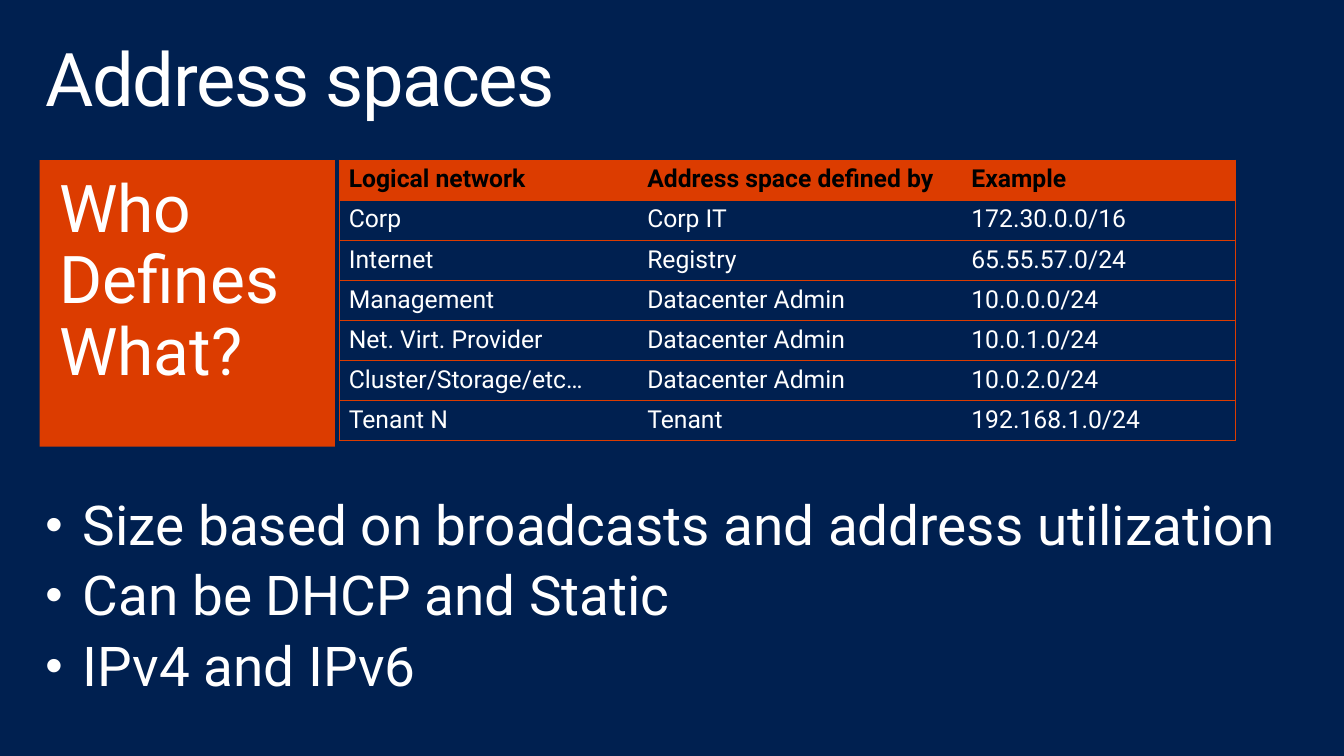
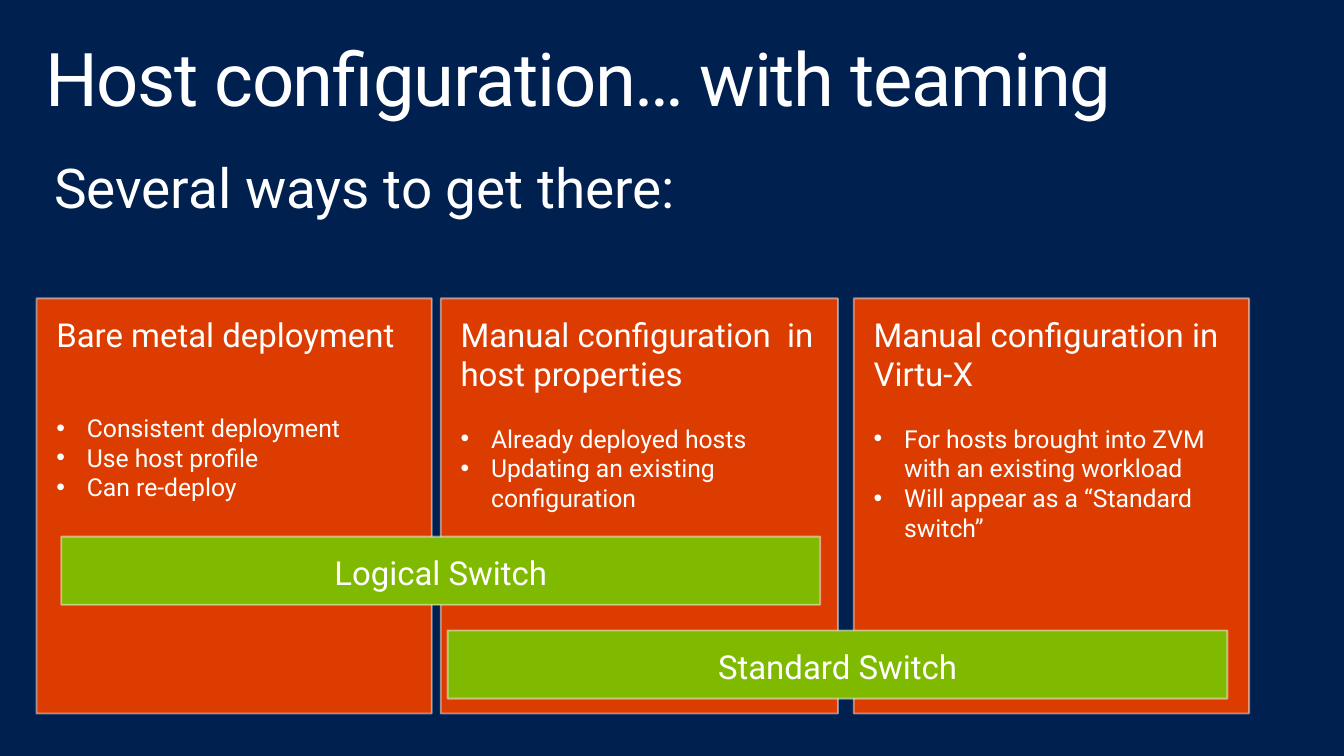
from lxml.etree import SubElement
from pptx import Presentation
from pptx.dml.color import RGBColor
from pptx.enum.shapes import MSO_SHAPE
from pptx.enum.text import MSO_ANCHOR, PP_ALIGN
from pptx.oxml import parse_xml
from pptx.oxml.ns import nsdecls, qn
from pptx.util import Pt

SCALE = 9144
NAVY, ORANGE, GREEN = "002050", "DC3C00", "7FBA00"
WHITE, BLACK, PALE = "FFFFFF", "000000", "F9F9F9"


def px(length):
    return length * SCALE


def color(value):
    return RGBColor.from_string(value)


def write(frame, text, size=18, fill=WHITE, bold=False, align=PP_ALIGN.LEFT, line=1.0,
          before=0, after=0, spacing=0, indent=0, bullet_size=100):
    paragraph = frame.paragraphs[0]
    if paragraph.runs:
        paragraph = frame.add_paragraph()
    paragraph.alignment = align
    paragraph.line_spacing = line
    paragraph.space_before = Pt(before)
    paragraph.space_after = Pt(after)
    if indent:
        properties = paragraph._p.get_or_add_pPr()
        properties.set("marL", str(px(indent)))
        properties.set("indent", str(-px(indent)))
        SubElement(properties, qn("a:buSzPct"), val=str(bullet_size * 1000))
        SubElement(properties, qn("a:buFont"), typeface="Arial")
        SubElement(properties, qn("a:buChar"), char="•")
    run = paragraph.add_run()
    run.text = text
    run.font.name = "Roboto"
    run.font.size = Pt(size)
    run.font.bold = bold
    run.font.color.rgb = color(fill)
    if spacing:
        run._r.get_or_add_rPr().set("spc", str(spacing * 100))


class Deck:
    def __init__(self):
        self.presentation = Presentation()
        self.presentation.slide_width = px(1360)
        self.presentation.slide_height = px(765)
        self.slide = None

    def start(self, title):
        self.slide = self.presentation.slides.add_slide(self.presentation.slide_layouts[6])
        background = self.slide.background.fill
        background.solid()
        background.fore_color.rgb = color(NAVY)
        write(self.text_box(30, 33, 1300, 100), title, size=54, line=0.9, spacing=-1)

    def prepare(self, frame, side, top):
        frame.word_wrap = True
        frame.vertical_anchor = MSO_ANCHOR.TOP
        frame.margin_left = frame.margin_right = px(side)
        frame.margin_top = frame.margin_bottom = px(top)
        return frame

    def text_box(self, left, top, width, height):
        box = self.slide.shapes.add_textbox(px(left), px(top), px(width), px(height))
        return self.prepare(box.text_frame, 16, 10)

    def panel(self, left, top, width, height, fill, outlined=True):
        shape = self.slide.shapes.add_shape(
            MSO_SHAPE.RECTANGLE, px(left), px(top), px(width), px(height))
        shape.shadow.inherit = False
        shape.fill.solid()
        shape.fill.fore_color.rgb = color(fill)
        if outlined:
            shape.line.color.rgb = color(PALE)
            shape.line.width = Pt(1.35)
            tint = shape.line._ln.find(".//" + qn("a:srgbClr"))
            SubElement(tint, qn("a:alpha"), val="50000")
        else:
            shape.line.fill.background()
        return self.prepare(shape.text_frame, 20, 16)

    def card(self, left, width, heading, gap, points):
        frame = self.panel(left, 302, width, 420, ORANGE)
        write(frame, heading, size=24)
        for number, point in enumerate(points):
            write(frame, point, indent=31, before=0 if number else gap)

    def switch(self, left, top, width, label):
        write(self.panel(left, top, width, 69, GREEN), label, size=24, align=PP_ALIGN.CENTER)

    def border(self, cell, sides):
        properties = cell._tc.get_or_add_tcPr()
        for position, side in enumerate("LRTB"):
            paint = (f'<a:solidFill><a:srgbClr val="{ORANGE}"/></a:solidFill>'
                     if side in sides else "<a:noFill/>")
            properties.insert(position, parse_xml(
                f'<a:ln{side} {nsdecls("a")} w="{Pt(0.75)}">{paint}</a:ln{side}>'))

    def table(self, left, top, height, widths, rows):
        table = self.slide.shapes.add_table(
            len(rows), len(widths), px(left), px(top), px(sum(widths)), px(height)).table
        table.horz_banding = False
        for column, width in zip(table.columns, widths):
            column.width = px(width)
        for row, values in enumerate(rows):
            header = row == 0
            for column, value in enumerate(values):
                cell = table.cell(row, column)
                if header:
                    cell.fill.solid()
                    cell.fill.fore_color.rgb = color(ORANGE)
                else:
                    cell.fill.background()
                write(cell.text_frame, value, fill=BLACK if header else WHITE, bold=header)
                sides = "TB"
                if column == 0:
                    sides += "L"
                if column == len(widths) - 1:
                    sides += "R"
                self.border(cell, sides)


def address_spaces(deck):
    deck.start("Address spaces")
    deck.table(343, 162, 284, (302, 328, 277), (
        ("Logical network", "Address space defined by", "Example"),
        ("Corp", "Corp IT", "172.30.0.0/16"),
        ("Internet", "Registry", "65.55.57.0/24"),
        ("Management", "Datacenter Admin", "10.0.0.0/24"),
        ("Net. Virt. Provider", "Datacenter Admin", "10.0.1.0/24"),
        ("Cluster/Storage/etc…", "Datacenter Admin", "10.0.2.0/24"),
        ("Tenant N", "Tenant", "192.168.1.0/24"),
    ))
    question = deck.panel(40, 162, 299, 290, ORANGE, outlined=False)
    for word in ("Who", "Defines", "What?"):
        write(question, word, size=48, line=0.9)
    notes = deck.text_box(30, 494, 1300, 238)
    for note in ("Size based on broadcasts and address utilization",
                 "Can be DHCP and Static", "IPv4 and IPv6"):
        write(notes, note, size=40, line=0.9, after=8, indent=38, bullet_size=90)


def host_configuration(deck):
    deck.start("Host configuration… with teaming")
    write(deck.text_box(39, 153, 1224, 102), "Several ways to get there:", size=40, line=0.9)
    deck.card(37, 400, "Bare metal deployment", 43,
              ("Consistent deployment", "Use host profile", "Can re-deploy"))
    deck.card(446, 402, "Manual configuration  in host properties", 22,
              ("Already deployed hosts", "Updating an existing configuration"))
    deck.card(864, 400, "Manual configuration in Virtu-X", 22,
              ("For hosts brought into ZVM with an existing workload",
               "Will appear as a “Standard switch”"))
    deck.switch(62, 543, 768, "Logical Switch")
    deck.switch(453, 638, 789, "Standard Switch")


def main():
    deck = Deck()
    address_spaces(deck)
    host_configuration(deck)
    deck.presentation.save("out.pptx")


if __name__ == "__main__":
    main()
